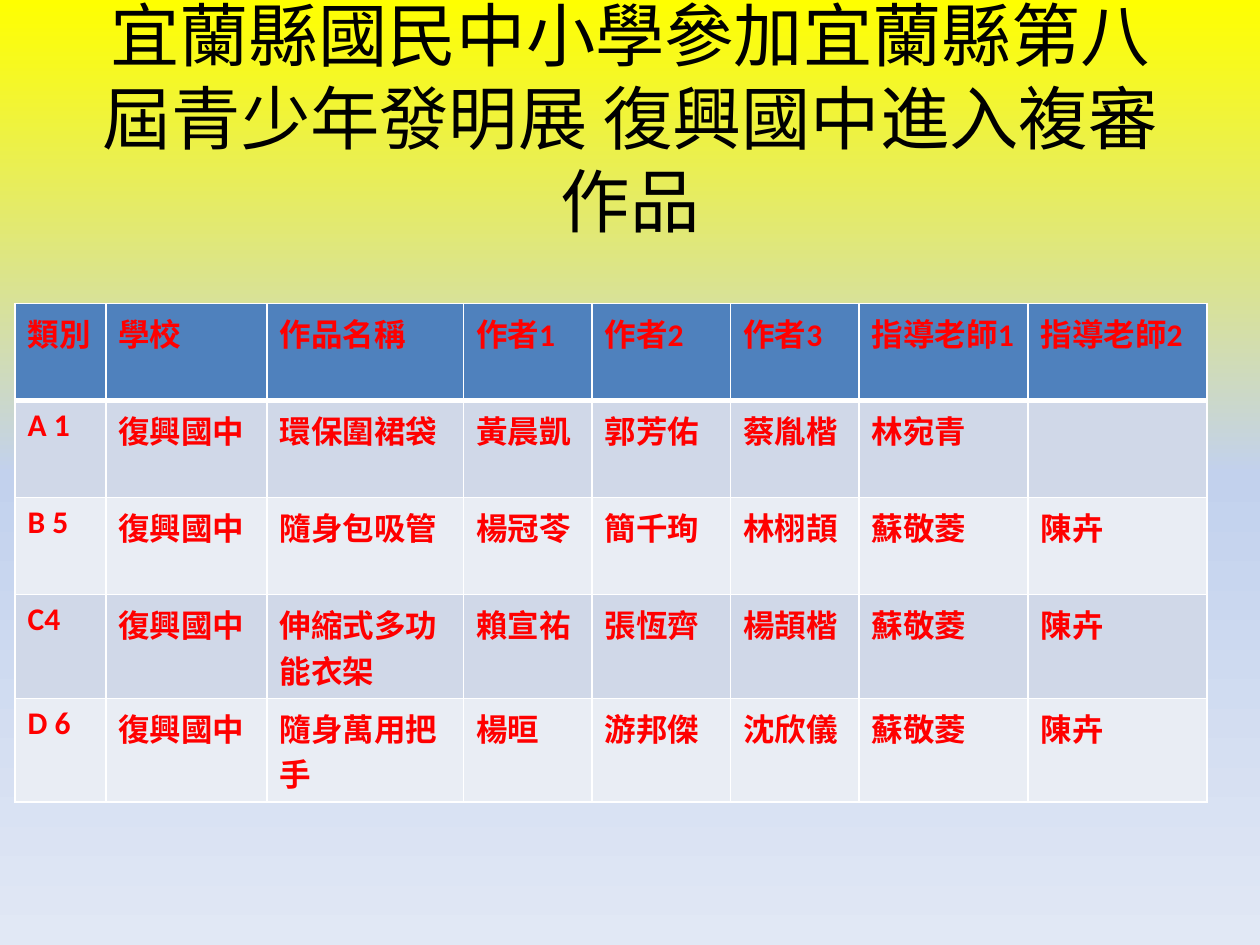
"""Build the slide listing the invention fair entries that reached the second review."""
from copy import deepcopy
from typing import NamedTuple

from lxml import etree
from pptx import Presentation
from pptx import util as u
from pptx.dml import color
from pptx.enum import text
from pptx.oxml import ns

FONT = "Calibri"
RED, BLACK, WHITE = "FF0000", "000000", "FFFFFF"
HEADER_FILL, BAND_FILLS = "4F81BD", ("D0D8E8", "E9EDF4")
COLUMN_WIDTHS = (0.72, 1.28, 1.56, 1.02, 1.1, 1.02, 1.34, 1.42)
ROW_HEIGHT = 0.77
SCHOOL = "復興國中"
HEADINGS = ("類別", "學校", "作品名稱", "作者1", "作者2", "作者3", "指導老師1", "指導老師2")


class Stop(NamedTuple):
    position: float
    hue: str


class Entry(NamedTuple):
    category: str
    school: str
    work: str
    author1: str
    author2: str
    author3: str
    teacher1: str
    teacher2: str


BACKGROUND = (Stop(0, "FFFF00"), Stop(0.5, "C2D1ED"), Stop(1, "E1E8F5"))
ENTRIES = (
    Entry("A 1", SCHOOL, "環保圍裙袋", "黃晨凱", "郭芳佑", "蔡胤楷", "林宛青", ""),
    Entry("B 5", SCHOOL, "隨身包吸管", "楊冠苓", "簡千珣", "林栩頡", "蘇敬菱", "陳卉"),
    Entry("C4", SCHOOL, "伸縮式多功能衣架", "賴宣祐", "張恆齊", "楊頡楷", "蘇敬菱", "陳卉"),
    Entry("D 6", SCHOOL, "隨身萬用把手", "楊晅", "游邦傑", "沈欣儀", "蘇敬菱", "陳卉"),
)


def rgb(value: str) -> color.RGBColor:
    return color.RGBColor.from_string(value)


def add_run(paragraph, wording: str, size: float, hue: str, bold: bool = False) -> None:
    run = paragraph.add_run()
    run.text = wording
    run.font.name = FONT
    run.font.size = u.Pt(size)
    run.font.bold = bold
    run.font.color.rgb = rgb(hue)


def paint_background(slide) -> None:
    fill = slide.background.fill
    fill.gradient()
    fill.gradient_angle = 270
    stop_list = next(slide.element.iter(ns.qn("a:gsLst")))
    while len(stop_list) < len(BACKGROUND):
        stop_list.append(deepcopy(stop_list[-1]))
    for gradient_stop, stop in zip(fill.gradient_stops, BACKGROUND):
        gradient_stop.position = stop.position
        gradient_stop.color.rgb = rgb(stop.hue)


def write_title(slide) -> None:
    title = slide.shapes.title
    title.left, title.top = u.Inches(0.5), u.Inches(0.3)
    title.width, title.height = u.Inches(9), u.Inches(1.25)
    frame = title.text_frame
    frame.word_wrap = True
    frame.auto_size = text.MSO_AUTO_SIZE.NONE
    frame.vertical_anchor = text.MSO_ANCHOR.MIDDLE
    paragraph = frame.paragraphs[0]
    paragraph.alignment = text.PP_ALIGN.CENTER
    add_run(paragraph, "宜蘭縣國民中小學參加宜蘭縣第八屆青少年發明展 復興國中進入複審作品", 39.6, BLACK)


def draw_borders(cell, top: float, bottom: float) -> None:
    properties = cell._tc.get_or_add_tcPr()
    for side, width in (("L", 1), ("R", 1), ("T", top), ("B", bottom)):
        line = etree.SubElement(properties, ns.qn(f"a:ln{side}"), w=str(u.Pt(width)))
        solid = etree.SubElement(line, ns.qn("a:solidFill"))
        etree.SubElement(solid, ns.qn("a:srgbClr"), val=WHITE)


def fill_cell(cell, wording: str, fill: str, top: float, bottom: float) -> None:
    draw_borders(cell, top, bottom)
    cell.fill.solid()
    cell.fill.fore_color.rgb = rgb(fill)
    if wording:
        add_run(cell.text_frame.paragraphs[0], wording, 18, RED, bold=True)


def add_entries(slide) -> None:
    rows = (HEADINGS, *ENTRIES)
    table = slide.shapes.add_table(
        len(rows), len(HEADINGS), u.Inches(0.12), u.Inches(2.41),
        u.Inches(sum(COLUMN_WIDTHS)), u.Inches(ROW_HEIGHT * len(rows))).table
    for column, width in zip(table.columns, COLUMN_WIDTHS):
        column.width = u.Inches(width)
    for index, (row, wordings) in enumerate(zip(table.rows, rows)):
        row.height = u.Inches(ROW_HEIGHT)
        fill = BAND_FILLS[(index - 1) % 2] if index else HEADER_FILL
        for cell, wording in zip(row.cells, wordings):
            fill_cell(cell, wording, fill, 3 if index == 1 else 1, 1 if index else 3)


def main() -> None:
    deck = Presentation()
    deck.slide_width, deck.slide_height = u.Inches(10), u.Inches(7.5)
    slide = deck.slides.add_slide(deck.slide_layouts[5])
    paint_background(slide)
    write_title(slide)
    add_entries(slide)
    deck.save("out.pptx")


if __name__ == "__main__":
    main()
